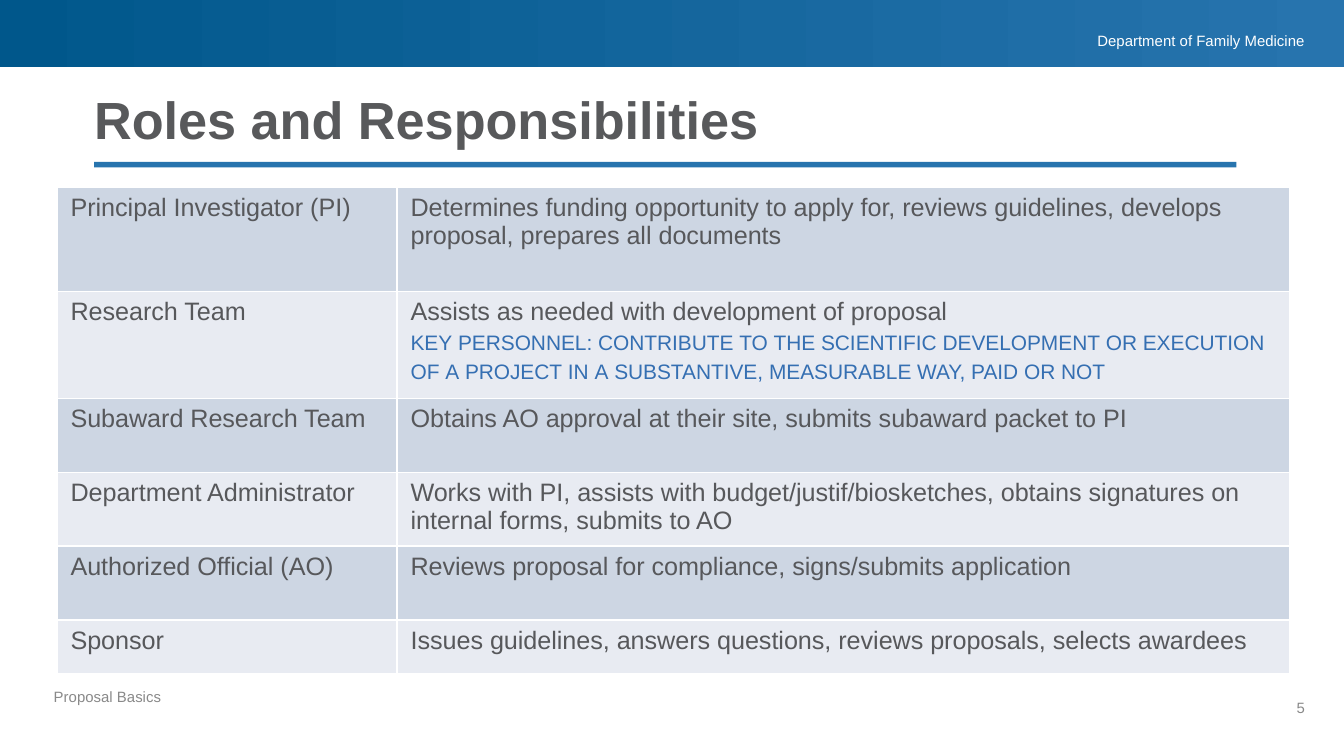
from lxml.etree import SubElement
from pptx import Presentation
from pptx.dml.color import RGBColor
from pptx.enum.shapes import MSO_SHAPE as Shape
from pptx.enum.text import MSO_ANCHOR as Anchor, MSO_AUTO_SIZE as AutoSize, PP_ALIGN as Align
from pptx.oxml.ns import qn
from pptx.util import Inches, Pt

COLUMNS, ROWS = 100, 56.25
RIGHT_MARGIN = 2.9
BLUE, DEEP_BLUE, KEY_BLUE = "2774AE", "00578B", "356FB2"
WHITE, GREY, TITLE_GREY, TEXT_GREY = "FFFFFF", "898989", "58595B", "57585B"
BANDS = ("CDD6E3", "E8EBF2")
COLUMN_PARTS = (25.3, 66.4)
ROW_PARTS = (7.75, 7.95, 5.5, 5.5, 5.5, 4)
ROLES = [
    ("Principal Investigator (PI)",
     "Determines funding opportunity to apply for, reviews guidelines, "
     "develops proposal, prepares all documents"),
    ("Research Team", "Assists as needed with development of proposal"),
    ("Subaward Research Team",
     "Obtains AO approval at their site, submits subaward packet to PI"),
    ("Department Administrator",
     "Works with PI, assists with budget/justif/biosketches, obtains "
     "signatures on internal forms, submits to AO"),
    ("Authorized Official (AO)",
     "Reviews proposal for compliance, signs/submits application"),
    ("Sponsor",
     "Issues guidelines, answers questions, reviews proposals, selects awardees"),
]
KEY_PERSONNEL = (
    "key personnel: contribute to the scientific development or execution "
    "of a project in a substantive, measurable way, paid or not")


def color(code):
    """Turn a hex string into a colour."""
    return RGBColor.from_string(code)


def grid(*cells):
    """Turn grid columns or rows, ten to the inch, into lengths."""
    return [Inches(cell / 10) for cell in cells]


def divide(length, parts):
    """Split a grid length in proportion to the parts."""
    return grid(*(length * part / sum(parts) for part in parts))


def set_all(target, values):
    """Set every attribute named in a dict of format values."""
    for name, value in values.items():
        setattr(target, name, value)


def write(paragraph, text, size, code, bold=False):
    """Put one formatted run in a paragraph."""
    run = paragraph.add_run()
    run.text = text
    set_all(run.font, {"name": "Arial", "size": Pt(size), "bold": bold})
    run.font.color.rgb = color(code)
    return run


def add_band(slide, box):
    """Draw a plain blue rectangle that fills the box."""
    band = slide.shapes.add_shape(Shape.RECTANGLE, *grid(*box))
    band.shadow.inherit = False
    band.line.fill.background()
    band.fill.solid()
    band.fill.fore_color.rgb = color(BLUE)
    return band


def add_label(slide, box, text, code, align=Align.LEFT, spacing=1.0):
    """Write one small line of text at the top of the box."""
    frame = slide.shapes.add_textbox(*grid(*box)).text_frame
    set_all(frame, {"word_wrap": True, "margin_left": 0, "margin_right": 0,
                    "margin_top": 0, "margin_bottom": 0})
    line = frame.paragraphs[0]
    set_all(line, {"alignment": align, "line_spacing": spacing})
    write(line, text, 8, code)


def add_header(slide, box):
    """Draw the gradient header with the department at its right end."""
    left, top, width, height = box
    header = add_band(slide, box)
    header.fill.gradient()
    header.fill.gradient_angle = 0
    for stop, code in zip(header.fill.gradient_stops, (DEEP_BLUE, BLUE)):
        stop.color.rgb = color(code)
    label = 0.25 * width
    add_label(slide, (left + width - RIGHT_MARGIN - label, top + 0.47 * height,
                      label, 0.28 * height),
              "Department of Family Medicine", WHITE, Align.RIGHT)


def add_title(slide, box):
    """Place the title with its rule at the foot of the box."""
    left, top, width, height = box
    rule = 0.4
    title = slide.shapes.title
    set_all(title, dict(zip(("left", "top", "width", "height"),
                            grid(left, top, width, height - 3 * rule))))
    frame = title.text_frame
    set_all(frame, {"margin_left": 0, "margin_right": 0, "margin_top": 0, "margin_bottom": 0,
                    "word_wrap": True, "auto_size": AutoSize.NONE,
                    "vertical_anchor": Anchor.BOTTOM})
    heading = frame.paragraphs[0]
    set_all(heading, {"alignment": Align.LEFT, "line_spacing": 0.9})
    write(heading, "Roles and Responsibilities", 28, TITLE_GREY, True)
    add_band(slide, (left, top + height - rule, width, rule))


def style_cell(cell, code):
    """Give a cell white borders and a fill."""
    properties = cell._tc.get_or_add_tcPr()
    for side in ("a:lnL", "a:lnR", "a:lnT", "a:lnB"):
        border = SubElement(properties, qn(side), w=str(Pt(1)))
        SubElement(SubElement(border, qn("a:solidFill")), qn("a:srgbClr"), val=WHITE)
    cell.fill.solid()
    cell.fill.fore_color.rgb = color(code)


def add_roles(slide, box):
    """Build the banded table of roles inside the box."""
    width, height = box[2:]
    table = slide.shapes.add_table(len(ROLES), len(COLUMN_PARTS), *grid(*box)).table
    set_all(table, {"first_row": False, "horz_banding": False})
    for column, column.width in zip(table.columns, divide(width, COLUMN_PARTS)):
        pass
    for index, (row, depth, texts) in enumerate(
            zip(table.rows, divide(height, ROW_PARTS), ROLES)):
        row.height = depth
        for cell, text in zip(row.cells, texts):
            style_cell(cell, BANDS[index % 2])
            write(cell.text_frame.paragraphs[0], text, 13.5, TEXT_GREY)
    personnel = table.cell(1, 1).text_frame.add_paragraph()
    note = write(personnel, KEY_PERSONNEL, 14, KEY_BLUE)
    note.font._element.set("cap", "small")


def add_footer(slide, box):
    """Write the deck name and the slide number at the ends of the box."""
    left, top, width, height = box
    number = 5
    add_label(slide, (left, top, 0.42 * width, height), "Proposal Basics", GREY, spacing=0.9)
    add_label(slide, (left + width - number, top + 0.7, number, height), "5", GREY, Align.RIGHT)


def main():
    """Build the slide and save it."""
    deck = Presentation()
    deck.slide_width, deck.slide_height = grid(COLUMNS, ROWS)
    slide = deck.slides.add_slide(deck.slide_layouts[5])
    add_header(slide, (0, 0, COLUMNS, 5))
    add_title(slide, (7, 7, 85, 5.45))
    add_roles(slide, (4.25, 13.95, 91.7, 36.2))
    add_footer(slide, (4, 51.3, COLUMNS - RIGHT_MARGIN - 4, 1.5))
    deck.save("out.pptx")


if __name__ == "__main__":
    main()
